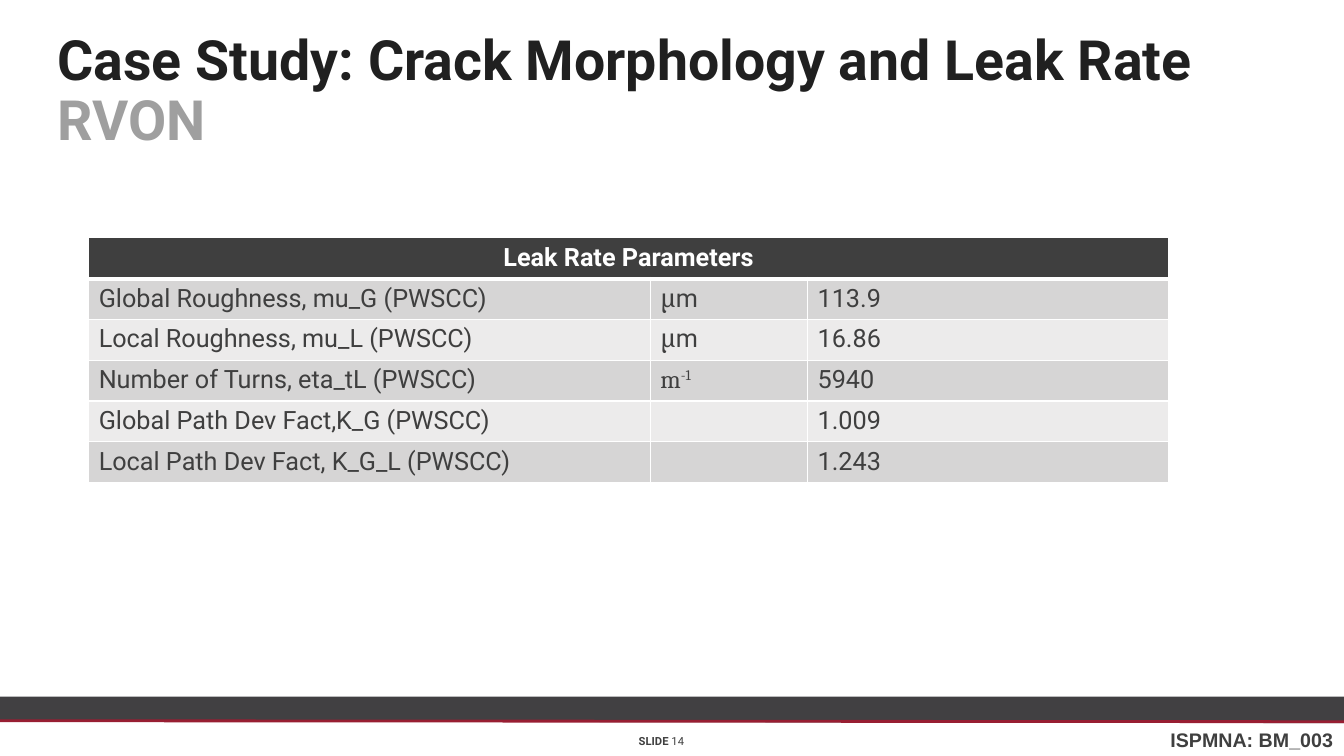
from lxml import etree
from pptx import Presentation
from pptx.dml.color import RGBColor
from pptx.enum.shapes import MSO_CONNECTOR, MSO_SHAPE
from pptx.enum.text import MSO_ANCHOR, PP_ALIGN
from pptx.oxml.ns import qn
from pptx.util import Inches, Pt

STRAIGHT = MSO_CONNECTOR.STRAIGHT
RECTANGLE = MSO_SHAPE.RECTANGLE
MIDDLE = MSO_ANCHOR.MIDDLE
LEFT, CENTER = PP_ALIGN.LEFT, PP_ALIGN.CENTER

WHITE = RGBColor(0xFF, 0xFF, 0xFF)
INK = RGBColor(0x20, 0x20, 0x20)
TEXT_GRAY = RGBColor(0x3F, 0x3F, 0x3F)
SUBTITLE_GRAY = RGBColor(0x9F, 0x9F, 0x9F)
BAR_GRAY = RGBColor(0x41, 0x40, 0x42)
CRIMSON = RGBColor(0x98, 0x1E, 0x32)
DARK_BAND = RGBColor(0xD6, 0xD5, 0xD5)
LIGHT_BAND = RGBColor(0xEC, 0xEB, 0xEB)

SLIDE_WIDTH, SLIDE_HEIGHT = Inches(13.33), Inches(7.5)


def write_runs(para, spans, size, color, bold=False, align=LEFT):
    """Add (text, font name) spans to a paragraph with a shared format."""
    para.alignment = align
    para.font.size, para.font.bold = Pt(size), bold
    para.font.color.rgb = color
    for text, font_name in spans:
        span = para.add_run()
        span.text = text
        span.font.name = font_name


def set_borders(cell, top, bottom):
    """Draw white cell borders; top and bottom are widths in points."""
    properties = cell._tc.get_or_add_tcPr()
    for side, width in (("L", 1), ("R", 1), ("T", top), ("B", bottom)):
        line = etree.SubElement(properties, qn(f"a:ln{side}"), w=str(Pt(width)))
        fill = etree.SubElement(line, qn("a:solidFill"))
        etree.SubElement(fill, qn("a:srgbClr"), val=str(WHITE))


deck = Presentation()
deck.slide_width, deck.slide_height = SLIDE_WIDTH, SLIDE_HEIGHT
page = deck.slides.add_slide(deck.slide_layouts[5])

# Footer band and rules
bar = page.shapes.add_shape(RECTANGLE, 0, Inches(6.91), SLIDE_WIDTH, Inches(0.25))
bar.shadow.inherit = False
bar.fill.solid()
bar.fill.fore_color.rgb = BAR_GRAY
bar.line.fill.background()

for start_y, color in ((7.14, BAR_GRAY), (7.15, CRIMSON)):
    rule = page.shapes.add_connector(
        STRAIGHT, 0, Inches(start_y), SLIDE_WIDTH, Inches(7.16))
    rule.line.color.rgb = color
    rule.line.width = Pt(2)
    etree.SubElement(rule._element.spPr, qn("a:effectLst"))

# Title
title = page.shapes.title
title.left, title.top = Inches(0.47), Inches(0.15)
title.width, title.height = Inches(12.45), Inches(1.53)
title.text_frame.vertical_anchor = MIDDLE
title.text_frame.word_wrap = True
para = title.text_frame.paragraphs[0]
para.line_spacing = 0.9
write_runs(para, [("Case Study: Crack Morphology and Leak Rate", "Roboto")],
           39.6, INK, True)
para.add_line_break()
subtitle = para.add_run()
subtitle.text = "RVON"
subtitle.font.name = "Roboto"
subtitle.font.color.rgb = SUBTITLE_GRAY

# Footer text
box = page.shapes.add_textbox(Inches(11.51), Inches(7.17), Inches(1.83), Inches(0.34))
box.text_frame.word_wrap = False
write_runs(box.text_frame.paragraphs[0], [("ISPMNA: BM_003", "Arial")],
           14, TEXT_GRAY, True)

box = page.shapes.add_textbox(Inches(6.1), Inches(7.24), Inches(0.92), Inches(0.22))
box.text_frame.word_wrap = True
para = box.text_frame.paragraphs[0]
write_runs(para, [("SLIDE ", "Roboto"), ("14", "Roboto")], 8, TEXT_GRAY, align=CENTER)
para.runs[0].font.bold = True

# Leak rate table
MICROMETRE = [("μ", "Cambria"), ("m", "Roboto")]
PER_METRE = [("m", "Cambria"), ("-1", "Cambria")]
parameters = [
    ("Global Roughness, mu_G (PWSCC)", MICROMETRE, "113.9"),
    ("Local Roughness, mu_L (PWSCC)", MICROMETRE, "16.86"),
    ("Number of Turns, eta_tL (PWSCC)", PER_METRE, "5940"),
    ("Global Path Dev Fact,K_G (PWSCC)", [], "1.009"),
    ("Local Path Dev Fact, K_G_L (PWSCC)", [], "1.243"),
]
column_widths = (5.57, 1.56, 3.58)
table = page.shapes.add_table(
    len(parameters) + 1, len(column_widths),
    Inches(0.88), Inches(2.36), Inches(10.71), Inches(2.43)).table
for column, width in zip(table.columns, column_widths):
    column.width = Inches(width)

for cell in table.rows[0].cells:
    set_borders(cell, 1, 3)
    cell.fill.solid()
    cell.fill.fore_color.rgb = TEXT_GRAY
header = table.cell(0, 0)
header.merge(table.cell(0, 2))
write_runs(header.text_frame.paragraphs[0], [("Leak Rate Parameters", "Roboto")],
           18, WHITE, True, CENTER)

for row, (name, unit, value) in enumerate(parameters, start=1):
    contents = ([(name, "Roboto")], unit, [(value, "Roboto")])
    for cell, spans in zip(table.rows[row].cells, contents):
        set_borders(cell, 3 if row == 1 else 1, 1)
        cell.fill.solid()
        cell.fill.fore_color.rgb = DARK_BAND if row % 2 else LIGHT_BAND
        para = cell.text_frame.paragraphs[0]
        write_runs(para, spans, 18, TEXT_GRAY)
        if spans is PER_METRE:
            para.runs[1]._r.get_or_add_rPr().set("baseline", "30000")

deck.save("out.pptx")
